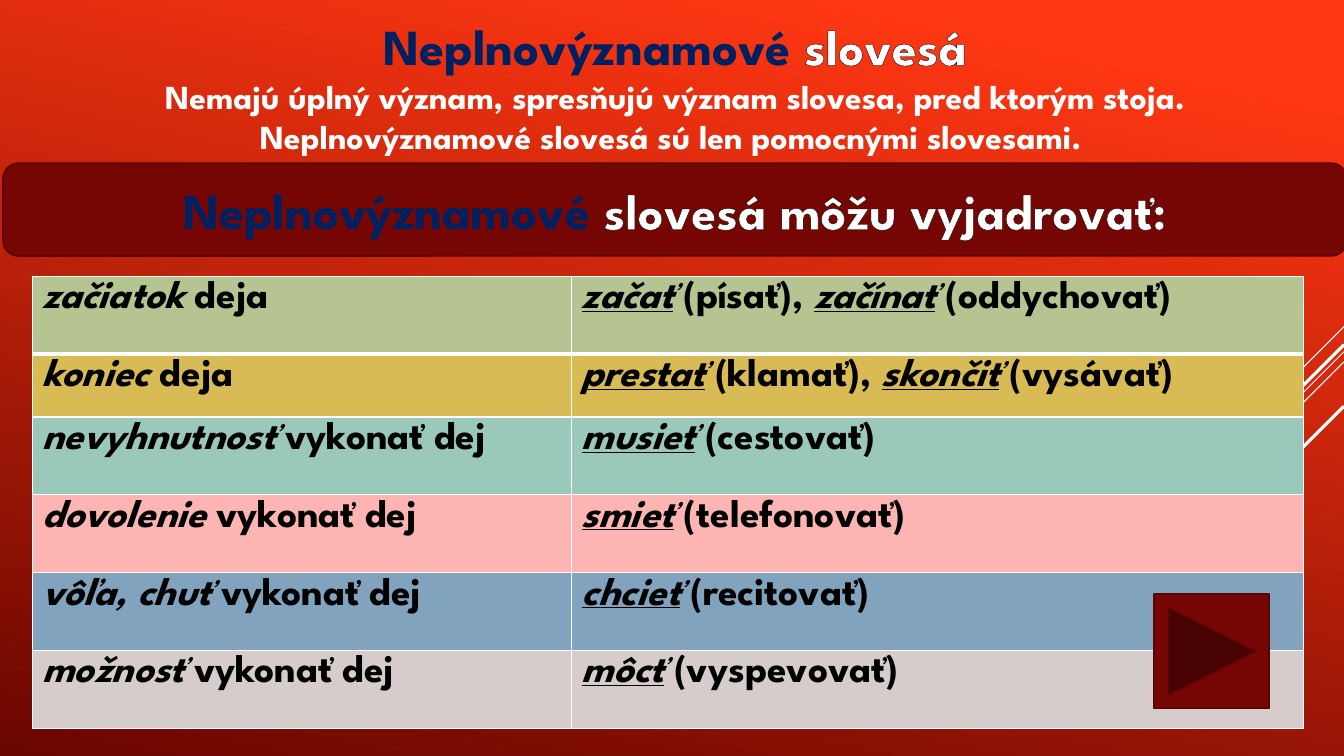
from lxml.etree import SubElement
from pptx import Presentation
from pptx.dml.color import RGBColor
from pptx.enum.shapes import MSO_CONNECTOR, MSO_SHAPE
from pptx.enum.text import MSO_ANCHOR, MSO_AUTO_SIZE, PP_ALIGN
from pptx.oxml import parse_xml
from pptx.oxml.ns import nsdecls, qn
from pptx.util import Pt

FONT = "League Spartan"
WHITE, BLACK, NAVY = "FFFFFF", "000000", "002060"
MAROON, MAROON_EDGE = "760603", "570402"
TITLE_START = ("Neplnovýznamové ", NAVY, WHITE)

VERB_ROWS = [
    ("B6C492", ["začiatok", " deja"],
     ["začať", " (písať), ", "začínať", " (oddychovať)"]),
    ("D9BB55", ["koniec", " deja"],
     ["prestať", " (klamať), ", "skončiť", " (vysávať)"]),
    ("9AC8BA", ["nevyhnutnosť", " vykonať dej"], ["musieť", " (cestovať)"]),
    ("FDB5B3", ["dovolenie ", "vykonať dej"], ["smieť", " (telefonovať)"]),
    ("82A3BE", ["vôľa, chuť ", "vykonať dej"], ["chcieť", " (recitovať)"]),
    ("D6CCCC", ["možnosť ", "vykonať dej"], ["môcť", " (vyspevovať)"]),
]


def color(value):
    return RGBColor.from_string(value)


def points(*values):
    return [Pt(v) for v in values]


def add_run(p, text, size, fill, outline=None, **extra):
    r = p.add_run()
    r.text = text
    values = {"name": FONT, "size": Pt(size), "bold": True, **extra}
    for name, value in values.items():
        setattr(r.font, name, value)
    r.font.fill.solid()
    r.font.fill.fore_color.rgb = color(fill)
    if outline:
        r.font._element.insert(0, parse_xml(
            f'<a:ln {nsdecls("a")} w="3175"><a:solidFill>'
            f'<a:srgbClr val="{outline}"/></a:solidFill></a:ln>'))


def add_heading(p, ending):
    p.alignment = PP_ALIGN.CENTER
    for text, fill, outline in (TITLE_START, (ending, WHITE, BLACK)):
        add_run(p, text, 36, fill, outline)


def add_background(s):
    fill = s.background.fill
    fill.gradient()
    fill.gradient_angle = 258
    stops = ((0.1, "FF3712"), (1, "6A0600"))
    for stop, (position, value) in zip(fill.gradient_stops, stops):
        stop.position = position
        stop.color.rgb = color(value)


def add_rays(s, right):
    rays = ((233.3, 72, 0.75), (251.3, 234.7, 0.75), (258.5, 149.4, 0.75),
            (246.2, 137.5, 2.25), (290.2, 100.1, 2.25))
    for top, length, width in rays:
        ray = s.shapes.add_connector(MSO_CONNECTOR.STRAIGHT, *points(
            right, top, right - length, top + length))
        ray.line.color.rgb = color(WHITE)
        ray.line.width = Pt(width)
        SubElement(ray._element.spPr, qn("a:effectLst"))


def add_intro(s, box):
    tf = s.shapes.add_textbox(*points(*box)).text_frame
    tf.word_wrap = True
    tf.auto_size = MSO_AUTO_SIZE.SHAPE_TO_FIT_TEXT
    add_heading(tf.paragraphs[0], "slovesá")
    for text in (
            "Nemajú úplný význam, spresňujú význam slovesa, pred ktorým stoja.",
            "Neplnovýznamové slovesá sú len pomocnými slovesami. "):
        p = tf.add_paragraph()
        p.alignment = PP_ALIGN.CENTER
        add_run(p, text, 24, WHITE)


def add_maroon_shape(s, kind, box):
    sp = s.shapes.add_shape(kind, *points(*box))
    sp.shadow.inherit = False
    sp.fill.solid()
    sp.fill.fore_color.rgb = color(MAROON)
    sp.line.color.rgb = color(MAROON_EDGE)
    sp.line.width = Pt(1.25)
    return sp


def add_banner(s, box):
    tf = add_maroon_shape(s, MSO_SHAPE.ROUNDED_RECTANGLE, box).text_frame
    tf.vertical_anchor = MSO_ANCHOR.MIDDLE
    add_heading(tf.paragraphs[0], "slovesá môžu vyjadrovať:")


def set_borders(cell, bottom):
    tcPr = cell._tc.get_or_add_tcPr()
    for side, width in (("L", 1), ("R", 1), ("T", 1), ("B", bottom)):
        tcPr.append(parse_xml(
            f'<a:ln{side} {nsdecls("a")} w="{Pt(width)}"><a:solidFill>'
            f'<a:srgbClr val="{WHITE}"/></a:solidFill></a:ln{side}>'))


def add_verb_table(s, box):
    table = s.shapes.add_table(len(VERB_ROWS), 2, *points(*box)).table
    table.first_row = table.horz_banding = False
    first_width = 385.2
    for column, width in zip(table.columns, (first_width, box[2] - first_width)):
        column.width = Pt(width)
    short_height = 45
    tall_height = (box[3] - short_height) / (len(VERB_ROWS) - 1)
    for i, (fill, *texts) in enumerate(VERB_ROWS):
        table.rows[i].height = Pt(short_height if i == 1 else tall_height)
        for j, parts in enumerate(texts):
            cell = table.cell(i, j)
            set_borders(cell, 3 if i == 0 else 1)
            cell.fill.solid()
            cell.fill.fore_color.rgb = color(fill)
            p = cell.text_frame.paragraphs[0]
            for k, text in enumerate(parts):
                stressed = k % 2 == 0
                add_run(p, text, 28, BLACK, italic=stressed,
                        underline=stressed and j == 1)


def add_next_button(s, box):
    add_maroon_shape(s, MSO_SHAPE.ACTION_BUTTON_FORWARD_OR_NEXT, box)


def main():
    prs = Presentation()
    prs.slide_width, prs.slide_height = points(960, 540)
    s = prs.slides.add_slide(prs.slide_layouts[6])
    add_background(s)
    add_rays(s, 960)
    add_intro(s, (30.2, 7.2, 904.3, 108.7))
    add_banner(s, (2.2, 116.6, 959.8, 66.2))
    add_verb_table(s, (23, 197.3, 907.9, 323))
    add_next_button(s, (824.4, 424.1, 82.1, 82.1))
    prs.save("out.pptx")


if __name__ == "__main__":
    main()
